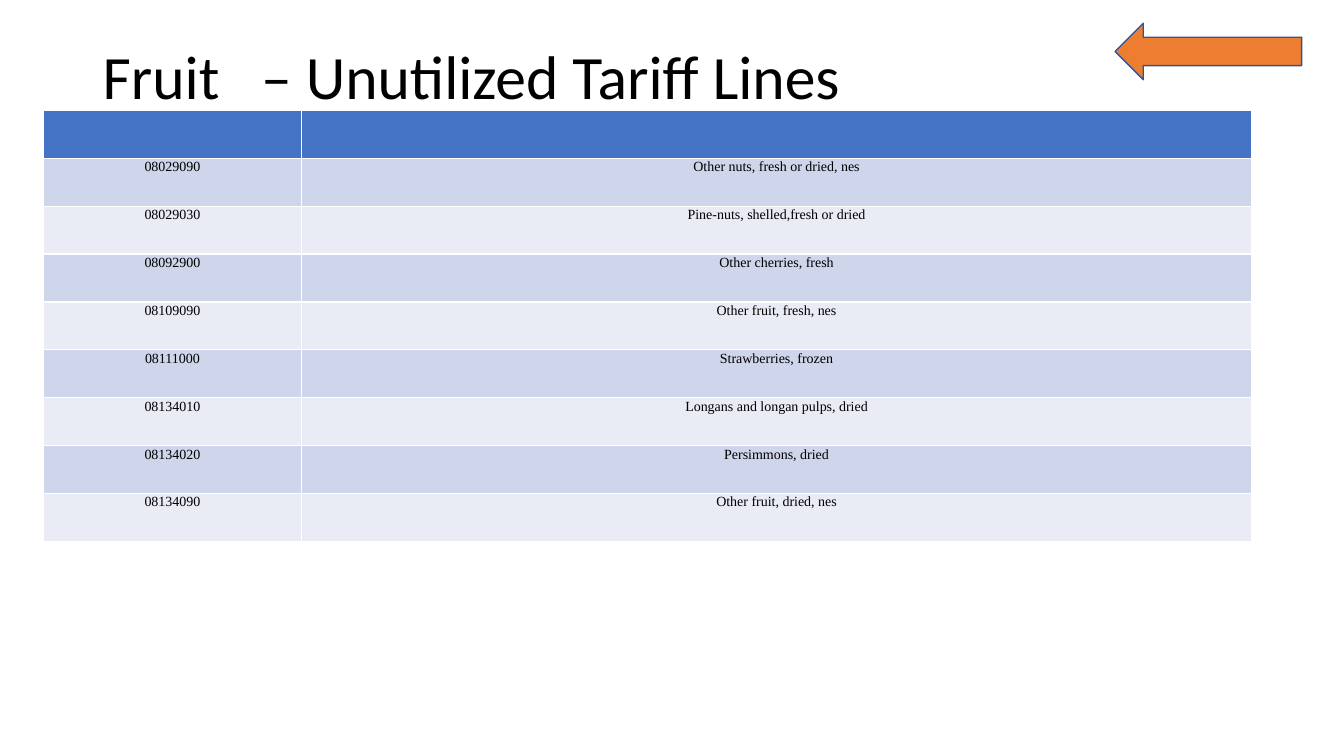
from pptx import Presentation
from pptx.dml.color import RGBColor
from pptx.enum.shapes import MSO_SHAPE
from pptx.enum.text import MSO_ANCHOR, PP_ALIGN
from pptx.util import Inches, Pt

WIDTH, HEIGHT = Inches(13.33), Inches(7.5)
BLACK = RGBColor(0x00, 0x00, 0x00)
BLUE = RGBColor(0x44, 0x72, 0xC4)
NAVY = RGBColor(0x32, 0x54, 0x91)
ORANGE = RGBColor(0xED, 0x7D, 0x31)
BANDS = (RGBColor(0xCF, 0xD5, 0xEA), RGBColor(0xE9, 0xEB, 0xF5))

TITLE_FONT = {"name": "Calibri", "size": Pt(44)}
CELL_FONT = {"name": "Times New Roman", "size": Pt(10)}
CELL_FORMAT = {
    "margin_left": Inches(0.01),
    "margin_top": Inches(0.01),
    "margin_right": Inches(0.01),
    "margin_bottom": 0,
}
CODE_COLUMN_PERCENT = 21.35
TARIFF_LINES = [
    ("08029090", "Other nuts, fresh or dried, nes"),
    ("08029030", "Pine-nuts, shelled,fresh or dried"),
    ("08092900", "Other cherries, fresh"),
    ("08109090", "Other fruit, fresh, nes"),
    ("08111000", "Strawberries, frozen"),
    ("08134010", "Longans and longan pulps, dried"),
    ("08134020", "Persimmons, dried"),
    ("08134090", "Other fruit, dried, nes"),
]


def share_box(left, top, width, height):
    """Turn percentages of the slide's size into a box of lengths."""
    return (
        int(WIDTH * left / 100),
        int(HEIGHT * top / 100),
        int(WIDTH * width / 100),
        int(HEIGHT * height / 100),
    )


def apply_format(target, values):
    """Set each attribute named in a dict of format values."""
    for name, value in values.items():
        setattr(target, name, value)


def write_text(para, text, font):
    """Add one formatted black span to a paragraph."""
    span = para.add_run()
    span.text = text
    apply_format(span.font, font)
    span.font.color.rgb = BLACK


def fill_solid(target, color):
    """Give a shape or cell a solid fill."""
    target.fill.solid()
    target.fill.fore_color.rgb = color


def add_title(page, box):
    """Place the slide title in its box."""
    frame = page.shapes.add_textbox(*box).text_frame
    apply_format(frame, {"word_wrap": True, "vertical_anchor": MSO_ANCHOR.MIDDLE})
    para = frame.paragraphs[0]
    para.line_spacing = 0.9
    write_text(para, "Fruit   – Unutilized Tariff Lines", TITLE_FONT)


def add_tariff_table(page, box):
    """Place the tariff lines under an empty header row."""
    row_count = len(TARIFF_LINES) + 1
    table = page.shapes.add_table(row_count, 2, *box).table
    width, height = box[2:]
    code_width = int(width * CODE_COLUMN_PERCENT / 100)
    table.columns[0].width = code_width
    table.columns[1].width = width - code_width
    for row in table.rows:
        row.height = height // row_count
    for cell in table.rows[0].cells:
        fill_solid(cell, BLUE)
    for index, texts in enumerate(TARIFF_LINES):
        for cell, text in zip(table.rows[index + 1].cells, texts):
            fill_solid(cell, BANDS[index % 2])
            apply_format(cell, CELL_FORMAT)
            para = cell.text_frame.paragraphs[0]
            para.alignment = PP_ALIGN.CENTER
            write_text(para, text, CELL_FONT)


def add_back_arrow(page, box):
    """Place the left arrow in its box."""
    arrow = page.shapes.add_shape(MSO_SHAPE.LEFT_ARROW, *box)
    arrow.shadow.inherit = False
    fill_solid(arrow, ORANGE)
    arrow.line.color.rgb = NAVY
    arrow.line.width = Pt(1)


def main():
    """Build the slide and save the deck."""
    deck = Presentation()
    apply_format(deck, {"slide_width": WIDTH, "slide_height": HEIGHT})
    page = deck.slides.add_slide(deck.slide_layouts[6])
    add_title(page, share_box(6.9, 5.33, 86.27, 10.4))
    add_tariff_table(page, share_box(3.23, 14.6, 89.9, 57.07))
    add_back_arrow(page, share_box(82.97, 3.07, 13.88, 7.47))
    deck.save("out.pptx")


if __name__ == "__main__":
    main()
